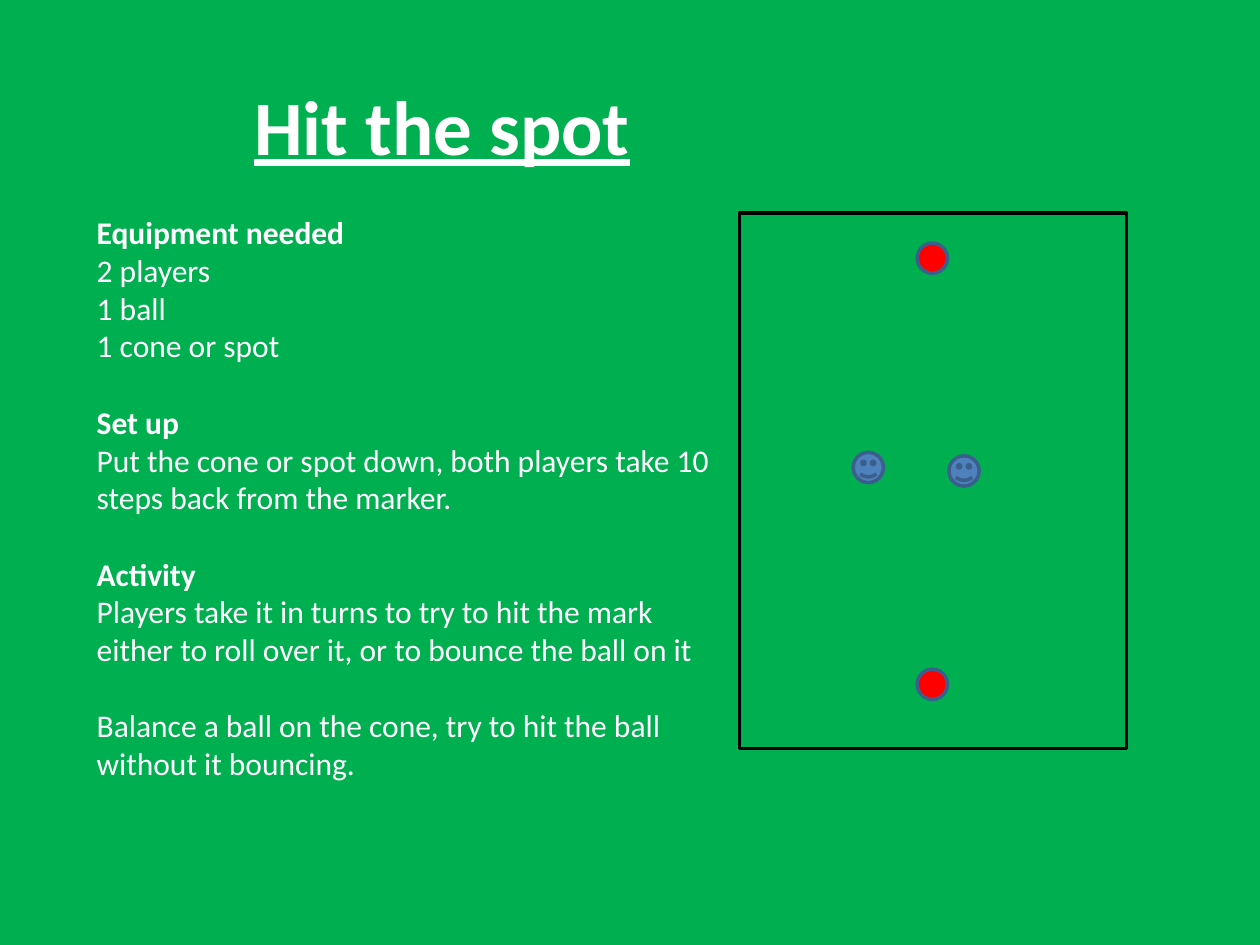
from dataclasses import dataclass

from pptx import Presentation, util as u
from pptx.dml.color import RGBColor
from pptx.enum import shapes, text

HUES = {
    "grass": "00B050",
    "text": "FFFFFF",
    "border": "000000",
    "spot": "FF0000",
    "face": "4F81BD",
    "edge": "3A5F8C",
}
FONT = "Calibri"
KIND = shapes.MSO_SHAPE
DOT = 0.61  # width of spots and players, cm
GAP = u.Pt(22)  # one line of body text


@dataclass
class Mark:
    kind: KIND
    x: float
    y: float
    fill: str
    w: float = DOT
    h: float = DOT
    edge: str = "edge"


@dataclass
class Line:
    words: str
    bold: bool = False
    gap: bool = False


MARKS = [
    Mark(KIND.RECTANGLE, 14.91, 4.29, "grass", 7.8, 10.8, "border"),
    Mark(KIND.OVAL, 18.49, 4.9, "spot"),
    Mark(KIND.OVAL, 18.49, 13.49, "spot"),
    Mark(KIND.SMILEY_FACE, 19.13, 9.19, "face"),
    Mark(KIND.SMILEY_FACE, 17.2, 9.12, "face"),
]

LINES = [
    Line("Equipment needed", bold=True),
    Line("2 players"),
    Line("1 ball"),
    Line("1 cone or spot"),
    Line("Set up", bold=True, gap=True),
    Line("Put the cone or spot down, both players take 10 steps back from the marker."),
    Line("Activity", bold=True, gap=True),
    Line("Players take it in turns to try to hit the mark either to roll over it, "
         "or to bounce the ball on it"),
    Line("Balance a ball on the cone, try to hit the ball without it bouncing.", gap=True),
]


def hue(name: str) -> RGBColor:
    return RGBColor.from_string(HUES[name])


def add_box(slide, x: float, y: float, w: float, h: float):
    """Add a wrapping text box, sized in cm, and return its text frame."""
    frame = slide.shapes.add_textbox(u.Cm(x), u.Cm(y), u.Cm(w), u.Cm(h)).text_frame
    frame.word_wrap = True
    return frame


def add_run(para, words: str, size: int, bold: bool, under: bool = False) -> None:
    run = para.add_run()
    run.text = words
    font = run.font
    font.name, font.size = FONT, u.Pt(size)
    font.bold, font.underline = bold, under
    font.color.rgb = hue("text")


def add_title(slide) -> None:
    frame = add_box(slide, 0.89, 0.46, 16.05, 4.09)
    frame.vertical_anchor = text.MSO_ANCHOR.MIDDLE
    para = frame.paragraphs[0]
    para.alignment = text.PP_ALIGN.CENTER
    add_run(para, "Hit the spot", 44, bold=True, under=True)


def add_body(slide, lines: list[Line]) -> None:
    frame = add_box(slide, 1.7, 4.17, 13.21, 12.57)
    for i, line in enumerate(lines):
        para = frame.add_paragraph() if i else frame.paragraphs[0]
        if line.gap:
            para.space_before = GAP
        add_run(para, line.words, 18, line.bold)


def add_mark(group, mark: Mark) -> None:
    shape = group.shapes.add_shape(
        mark.kind, u.Cm(mark.x), u.Cm(mark.y), u.Cm(mark.w), u.Cm(mark.h))
    shape.shadow.inherit = False
    shape.fill.solid()
    shape.fill.fore_color.rgb = hue(mark.fill)
    shape.line.color.rgb = hue(mark.edge)
    shape.line.width = u.Pt(2)


def main() -> None:
    deck = Presentation()
    deck.slide_width, deck.slide_height = u.Cm(25.4), u.Cm(19.05)
    slide = deck.slides.add_slide(deck.slide_layouts[6])
    back = slide.background.fill
    back.solid()
    back.fore_color.rgb = hue("grass")

    add_title(slide)
    add_body(slide, LINES)
    pitch = slide.shapes.add_group_shape()
    for mark in MARKS:
        add_mark(pitch, mark)
    deck.save("out.pptx")


if __name__ == "__main__":
    main()
